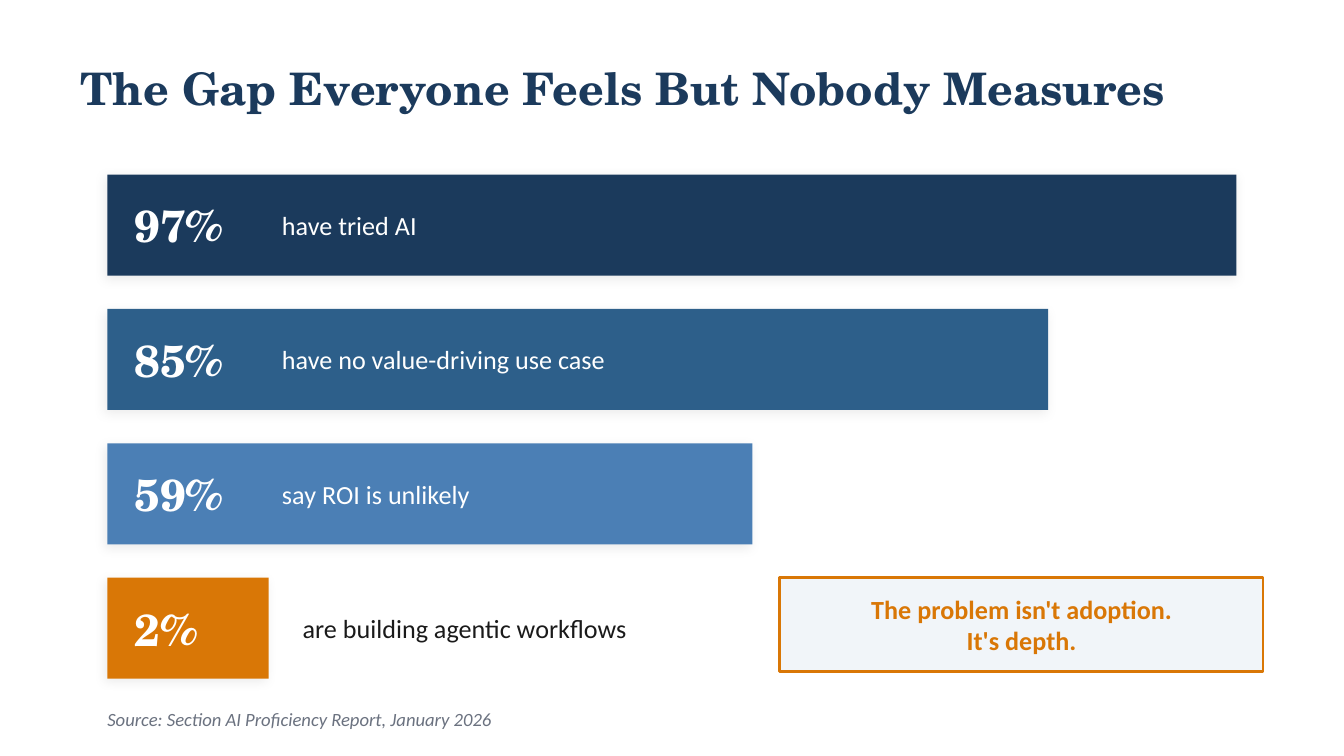
from dataclasses import dataclass

from lxml.etree import SubElement
from pptx import Presentation
from pptx.dml.color import RGBColor
from pptx.enum.shapes import MSO_SHAPE as Kind
from pptx.enum.text import MSO_ANCHOR as Anchor, MSO_AUTO_SIZE as Fit, PP_ALIGN as Align
from pptx.oxml.ns import qn
from pptx.util import Cm, Pt

NAVY = RGBColor(0x1B, 0x3A, 0x5C)
BLUE = RGBColor(0x2D, 0x5F, 0x8A)
SKY = RGBColor(0x4B, 0x7F, 0xB5)
AMBER = RGBColor(0xD9, 0x77, 0x06)
WHITE = RGBColor(0xFF, 0xFF, 0xFF)
INK = RGBColor(0x1A, 0x1A, 0x1A)
GRAY = RGBColor(0x6B, 0x72, 0x80)
PALE = RGBColor(0xF1, 0xF5, 0xF9)

SERIF = "TeX Gyre Schola"
SANS = "Calibri"

LEFT = 2.03
TOP = 3.3
STEP = 2.54
HIGH = 1.91
PAD = 0.51


@dataclass(frozen=True)
class Box:
    x: float
    y: float
    w: float
    h: float

    def cm(self) -> tuple:
        return Cm(self.x), Cm(self.y), Cm(self.w), Cm(self.h)


@dataclass(frozen=True)
class Bar:
    rate: str
    label: str
    width: float
    fill: RGBColor
    inside: bool = True


BARS = (
    Bar("97%", "have tried AI", 21.34, NAVY),
    Bar("85%", "have no value-driving use case", 17.78, BLUE),
    Bar("59%", "say ROI is unlikely", 12.19, SKY),
    Bar("2%", "are building agentic workflows", 3.05, AMBER, inside=False),
)


def write(shape, text: str, *, size: float = 14, face: str = SANS,
          color: RGBColor = INK, bold: bool = False, italic: bool = False,
          align: Align = Align.LEFT) -> None:
    frame = shape.text_frame
    frame.text = text
    frame.word_wrap = True
    frame.auto_size = Fit.NONE
    frame.vertical_anchor = Anchor.MIDDLE
    frame.margin_left = frame.margin_right = 0
    frame.margin_top = frame.margin_bottom = 0
    for para in frame.paragraphs:
        para.alignment = align
        for run in para.runs:
            font = run.font
            font.size, font.name = Pt(size), face
            font.bold, font.italic = bold, italic
            font.color.rgb = color


def label(slide, box: Box, text: str, **style) -> None:
    write(slide.shapes.add_textbox(*box.cm()), text, **style)


def block(slide, box: Box, fill: RGBColor):
    shape = slide.shapes.add_shape(Kind.RECTANGLE, *box.cm())
    shape.shadow.inherit = False
    shape.fill.solid()
    shape.fill.fore_color.rgb = fill
    shape.line.fill.background()
    return shape


def shade(shape) -> None:
    effects = shape._element.spPr.find(qn("a:effectLst"))
    outer = SubElement(effects, qn("a:outerShdw"), blurRad=str(Pt(6)),
                       dist=str(Pt(2)), dir=str(135 * 60000),
                       algn="bl", rotWithShape="0")
    black = SubElement(outer, qn("a:srgbClr"), val="000000")
    SubElement(black, qn("a:alpha"), val="8000")


def draw(slide, bar: Bar, y: float) -> None:
    shade(block(slide, Box(LEFT, y, bar.width, HIGH), bar.fill))
    label(slide, Box(LEFT + PAD, y, 2.54, HIGH), bar.rate,
          size=24, face=SERIF, color=WHITE, bold=True)
    if bar.inside:
        x = 5.33
        box = Box(x, y, LEFT + bar.width - PAD - x, HIGH)
        label(slide, box, bar.label, color=WHITE)
    else:
        label(slide, Box(5.72, y, 12.7, HIGH), bar.label)


def main() -> None:
    deck = Presentation()
    deck.slide_width, deck.slide_height = Cm(25.4), Cm(14.29)
    slide = deck.slides.add_slide(deck.slide_layouts[5])

    title = slide.shapes.title
    title.left, title.top, title.width, title.height = Box(1.52, 0.76, 22.35, 1.78).cm()
    write(title, "The Gap Everyone Feels But Nobody Measures",
          size=24, face=SERIF, color=NAVY, bold=True)

    for row, bar in enumerate(BARS):
        draw(slide, bar, TOP + row * STEP)

    label(slide, Box(LEFT, 13.21, 11.43, 0.76),
          "Source: Section AI Proficiency Report, January 2026",
          size=10, color=GRAY, italic=True)

    last = TOP + 3 * STEP
    note = block(slide, Box(14.73, last, 9.14, 1.78), PALE)
    note.line.color.rgb = AMBER
    note.line.width = Pt(1.5)
    label(slide, Box(14.99, last, 8.64, 1.78),
          "The problem isn't adoption.\nIt's depth.",
          color=AMBER, bold=True, align=Align.CENTER)

    deck.save("out.pptx")


if __name__ == "__main__":
    main()
